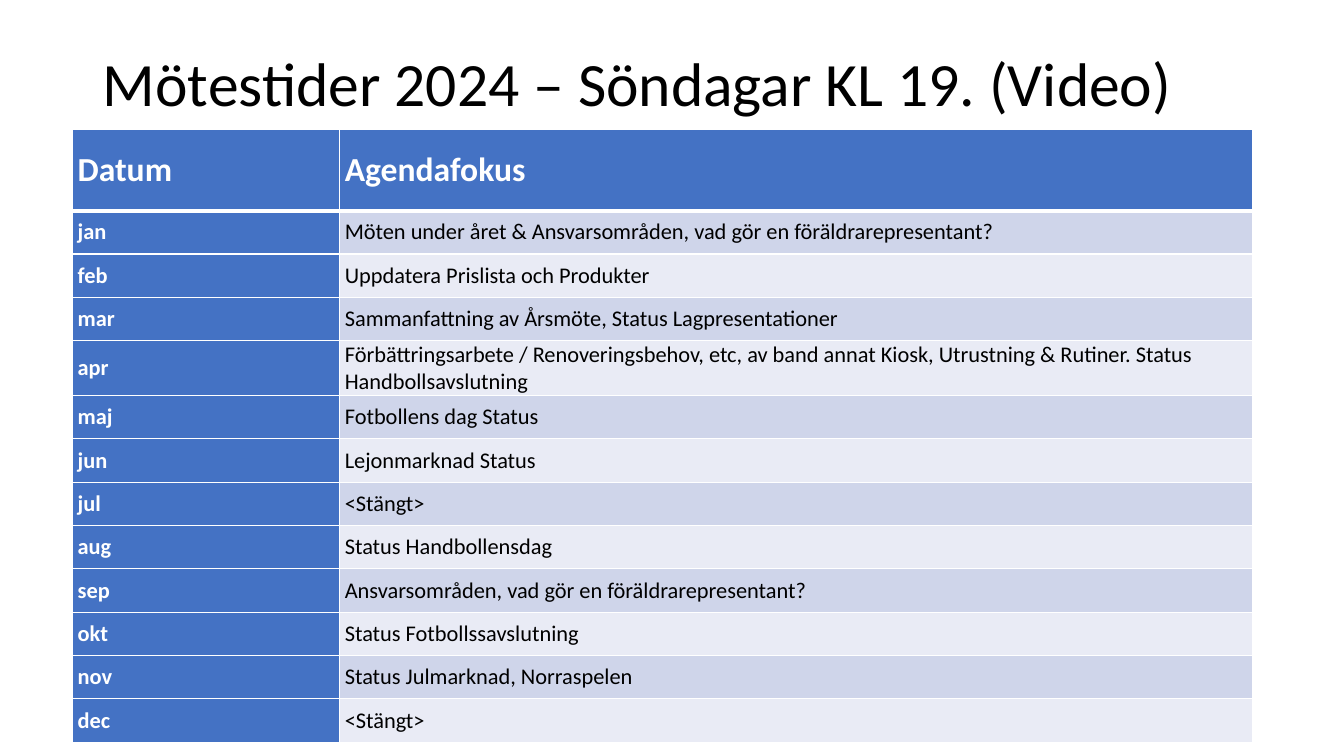
"""Build a slide with a table of monthly meetings and their agenda focus."""
from lxml import etree
from pptx import Presentation
from pptx.dml.color import RGBColor
from pptx.enum.text import MSO_ANCHOR, PP_ALIGN
from pptx.oxml.ns import qn
from pptx.util import Inches, Pt

MIDDLE = MSO_ANCHOR.MIDDLE
LEFT = PP_ALIGN.LEFT
FONT = "Calibri"
TITLE_ONLY_LAYOUT = 5
COLORS = {
    "text": "000000",
    "white": "FFFFFF",
    "header": "4472C4",
    "odd_band": "CFD5EA",
    "even_band": "E9EBF5",
}
TITLE = "Mötestider 2024 – Söndagar KL 19. (Video)"
MEETINGS = [
    ("Datum", "Agendafokus"),
    ("jan", "Möten under året & Ansvarsområden, vad gör en föräldrarepresentant?"),
    ("feb", "Uppdatera Prislista och Produkter"),
    ("mar", "Sammanfattning av Årsmöte, Status Lagpresentationer"),
    ("apr", "Förbättringsarbete / Renoveringsbehov, etc, av band annat Kiosk, "
            "Utrustning & Rutiner. Status Handbollsavslutning"),
    ("maj", "Fotbollens dag Status"),
    ("jun", "Lejonmarknad Status"),
    ("jul", "<Stängt>"),
    ("aug", "Status Handbollensdag"),
    ("sep", "Ansvarsområden, vad gör en föräldrarepresentant?"),
    ("okt", "Status Fotbollssavslutning"),
    ("nov", "Status Julmarknad, Norraspelen"),
    ("dec", "<Stängt>"),
]
COLUMN_WIDTHS = (2.65, 9.05)
HEADER_HEIGHT = 0.81
ROW_HEIGHT = 0.43


def color(name):
    return RGBColor.from_string(COLORS[name])


def format_paragraph(paragraph, size, color_name, bold=False):
    paragraph.alignment = LEFT
    paragraph.font.name = FONT
    paragraph.font.size = Pt(size)
    paragraph.font.bold = bold
    paragraph.font.color.rgb = color(color_name)


def add_title(slide):
    title = slide.shapes.title
    title.left, title.top = Inches(0.92), Inches(0.13)
    title.width, title.height = Inches(11.5), Inches(1.45)
    title.text_frame.text = TITLE
    title.text_frame.vertical_anchor = MIDDLE
    paragraph = title.text_frame.paragraphs[0]
    paragraph.line_spacing = 0.9
    format_paragraph(paragraph, 44, "text")


def set_borders(cell, top, bottom):
    properties = cell._tc.get_or_add_tcPr()
    for side, points in (("L", 1), ("R", 1), ("T", top), ("B", bottom)):
        line = etree.SubElement(properties, qn(f"a:ln{side}"), w=str(Pt(points)))
        fill = etree.SubElement(line, qn("a:solidFill"))
        etree.SubElement(fill, qn("a:srgbClr"), val=COLORS["white"])


def fill_cell(cell, text, row, column):
    is_header = row == 0
    is_heading = is_header or column == 0
    band = "odd_band" if row % 2 else "even_band"
    set_borders(cell, top=3 if row == 1 else 1, bottom=3 if is_header else 1)
    cell.fill.solid()
    cell.fill.fore_color.rgb = color("header" if is_heading else band)
    cell.vertical_anchor = MIDDLE
    cell.margin_left = cell.margin_right = Inches(0.05)
    cell.margin_top = cell.margin_bottom = 0
    cell.text = text
    format_paragraph(cell.text_frame.paragraphs[0], 24 if is_header else 16,
                     "white" if is_heading else "text", is_heading)


def add_meeting_table(slide):
    height = HEADER_HEIGHT + ROW_HEIGHT * (len(MEETINGS) - 1)
    table = slide.shapes.add_table(
        len(MEETINGS), len(COLUMN_WIDTHS), Inches(0.72), Inches(1.28),
        Inches(sum(COLUMN_WIDTHS)), Inches(height)).table
    table.first_col = True
    for column, width in zip(table.columns, COLUMN_WIDTHS):
        column.width = Inches(width)
    for row, meeting in enumerate(MEETINGS):
        table.rows[row].height = Inches(ROW_HEIGHT if row else HEADER_HEIGHT)
        for column, text in enumerate(meeting):
            fill_cell(table.cell(row, column), text, row, column)


def main():
    presentation = Presentation()
    presentation.slide_width = Inches(13.33)
    presentation.slide_height = Inches(7.5)
    layout = presentation.slide_layouts[TITLE_ONLY_LAYOUT]
    slide = presentation.slides.add_slide(layout)
    add_title(slide)
    add_meeting_table(slide)
    presentation.save("out.pptx")


if __name__ == "__main__":
    main()
